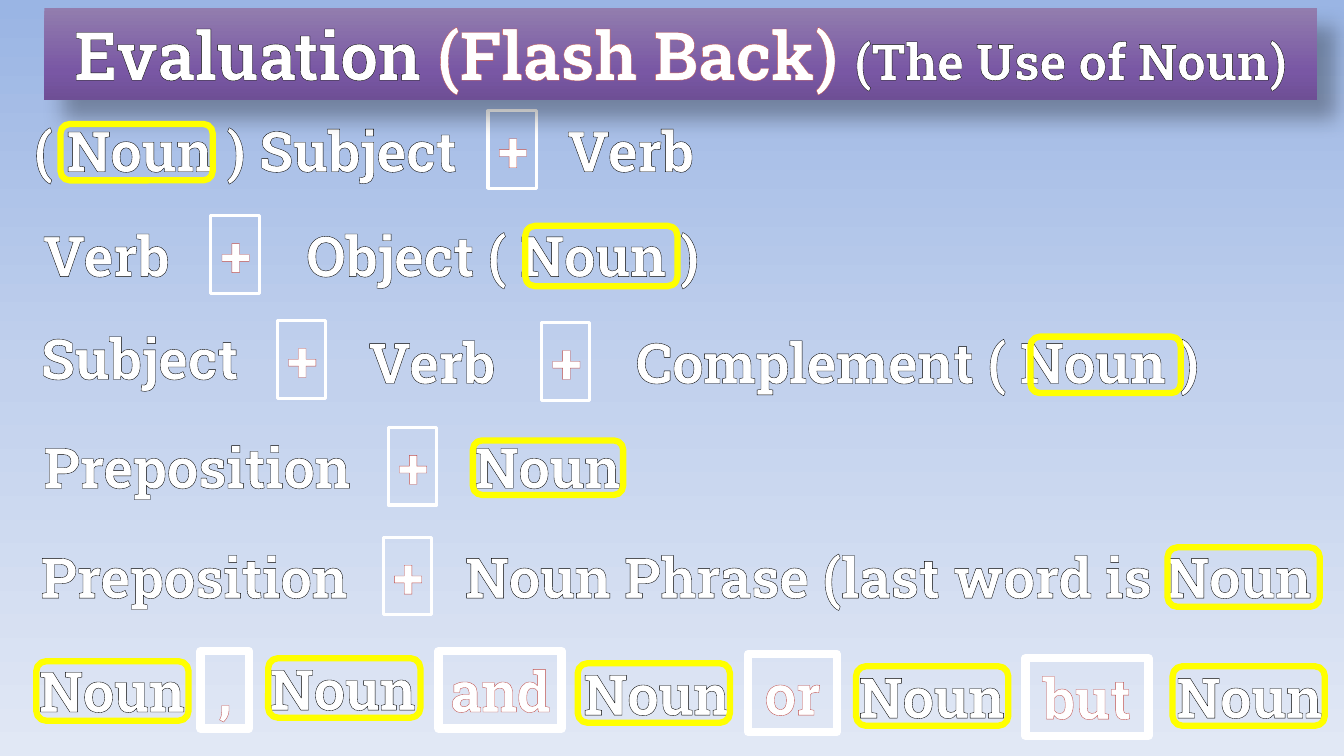
"""Build the grammar review slide on the use of nouns."""
from lxml import etree
from pptx import Presentation
from pptx.dml.color import RGBColor
from pptx.enum.shapes import MSO_SHAPE
from pptx.enum.text import MSO_ANCHOR, MSO_AUTO_SIZE, PP_ALIGN
from pptx.oxml.ns import qn
from pptx.util import Emu, Pt

RECTANGLE, ROUNDED = MSO_SHAPE.RECTANGLE, MSO_SHAPE.ROUNDED_RECTANGLE
TOP, CENTER, GROW = MSO_ANCHOR.TOP, PP_ALIGN.CENTER, MSO_AUTO_SIZE.SHAPE_TO_FIT_TEXT

PX = 9144
SLIDE_SIZE = (1333, 750)
FONT = "Roboto Slab"
COLORS = {"white": "FFFFFF", "black": "000000", "red": "C0504D", "yellow": "FFFF00"}
SKY = [(0, "9AB5E4"), (50, "C2D1ED"), (100, "E1E8F5")]
PURPLE = [(0, "927DAE"), (69, "7957A4"), (100, "6E4F95")]
DARK_EDGE, RED_EDGE = ("black", 1.06), ("red", 0.52)

TITLE_BOX = (44, 8, 1262, 91)
TITLE = [
    ("Evaluation ", 48, ("black", 0.75)),
    ("(Flash Back) ", 48, RED_EDGE),
    ("(The Use of Noun)", 36, DARK_EDGE),
]

BOX_HEIGHT = 77
WIDTHS = {
    "Noun": 188, "Verb": 175, "Subject": 233, "Preposition": 347,
    "( Noun ) Subject": 453, "Object ( Noun )": 451, "Complement ( Noun )": 608,
    "Noun Phrase (last word is Noun": 874,
    "+": 48, ",": 48, "and": 122, "or": 88, "but": 122,
}
WORDS = [
    (17, 110, "( Noun ) Subject"), (538, 110, "Verb"),
    (18, 214, "Verb"), (273, 214, "Object ( Noun )"),
    (22, 316, "Subject"), (341, 320, "Verb"), (606, 320, "Complement ( Noun )"),
    (22, 424, "Preposition"), (449, 424, "Noun"),
    (19, 533, "Preposition"), (444, 533, "Noun Phrase (last word is Noun"),
    (17, 646, "Noun"), (246, 644, "Noun"), (557, 649, "Noun"),
    (830, 652, "Noun"), (1145, 652, "Noun"),
]
PLUS_SIGNS = [
    (484, 110, "+"), (209, 214, "+"), (275, 318, "+"),
    (537, 320, "+"), (385, 424, "+"), (380, 533, "+"),
]
JOINERS = [(199, 646, ","), (435, 646, "and"), (742, 649, "or"), (1017, 653, "but")]
NOUN_RINGS = [
    (60, 123, 151, 56), (521, 224, 151, 60), (1022, 334, 149, 56),
    (469, 437, 149, 54), (1158, 543, 151, 59), (36, 656, 151, 59),
    (266, 653, 151, 59), (573, 658, 151, 59), (849, 661, 151, 59),
    (1163, 661, 151, 59),
]


def rgb(name):
    return RGBColor.from_string(COLORS[name])


def add_color(parent, value, alpha=None):
    color = etree.SubElement(parent, qn("a:srgbClr"), val=value)
    if alpha is not None:
        etree.SubElement(color, qn("a:alpha"), val=str(alpha * 1000))


def set_gradient(fill, element, stops):
    fill.gradient()
    fill.gradient_angle = 270
    stop_list = element.find(".//" + qn("a:gsLst"))
    for old_stop in list(stop_list):
        stop_list.remove(old_stop)
    for position, value in stops:
        stop = etree.SubElement(stop_list, qn("a:gs"), pos=str(position * 1000))
        add_color(stop, value)


def add_shadow(shape):
    effects = shape.element.spPr.find(qn("a:effectLst"))
    shadow = etree.SubElement(
        effects, qn("a:outerShdw"), blurRad=str(Pt(15)), dist=str(Pt(18)),
        dir=str(45 * 60000), algn="tl", rotWithShape="0")
    add_color(shadow, COLORS["black"], 30)


def set_text(shape, runs, wrap):
    frame = shape.text_frame
    for name, value in {"word_wrap": wrap, "auto_size": GROW, "vertical_anchor": TOP}.items():
        setattr(frame, name, value)
    paragraph = frame.paragraphs[0]
    paragraph.alignment = CENTER
    for text, size, (edge_color, edge_width) in runs:
        run = paragraph.add_run()
        run.text = text
        for name, value in {"name": FONT, "size": Pt(size), "bold": True}.items():
            setattr(run.font, name, value)
        run.font.color.rgb = rgb("white")
        edge = etree.Element(qn("a:ln"), w=str(Pt(edge_width)))
        add_color(etree.SubElement(edge, qn("a:solidFill")), COLORS[edge_color])
        run.font._element.insert(0, edge)


def add_frame(slide, kind, box, color=None, width=0):
    shape = slide.shapes.add_shape(kind, *(Emu(length * PX) for length in box))
    shape.shadow.inherit = False
    shape.fill.background()
    if color:
        shape.line.color.rgb = rgb(color)
        shape.line.width = Pt(width)
    else:
        shape.line.fill.background()
    return shape


def main():
    presentation = Presentation()
    presentation.slide_width, presentation.slide_height = (Emu(n * PX) for n in SLIDE_SIZE)
    slide = presentation.slides.add_slide(presentation.slide_layouts[6])
    set_gradient(slide.background.fill, slide.element, SKY)

    for left, top, text in WORDS:
        box = (left, top, WIDTHS[text], BOX_HEIGHT)
        word = slide.shapes.add_textbox(*(Emu(length * PX) for length in box))
        set_text(word, [(text, 40, DARK_EDGE)], False)

    for signs, line_width in ((PLUS_SIGNS, 2.25), (JOINERS, 6)):
        for left, top, text in signs:
            box = (left, top, WIDTHS[text], BOX_HEIGHT)
            sign = add_frame(slide, RECTANGLE, box, "white", line_width)
            set_text(sign, [(text, 40, RED_EDGE)], False)

    title = add_frame(slide, RECTANGLE, TITLE_BOX)
    set_gradient(title.fill, title.element, PURPLE)
    add_shadow(title)
    set_text(title, TITLE, False)

    for box in NOUN_RINGS:
        add_frame(slide, ROUNDED, box, "yellow", 4.5)

    presentation.save("out.pptx")


if __name__ == "__main__":
    main()
